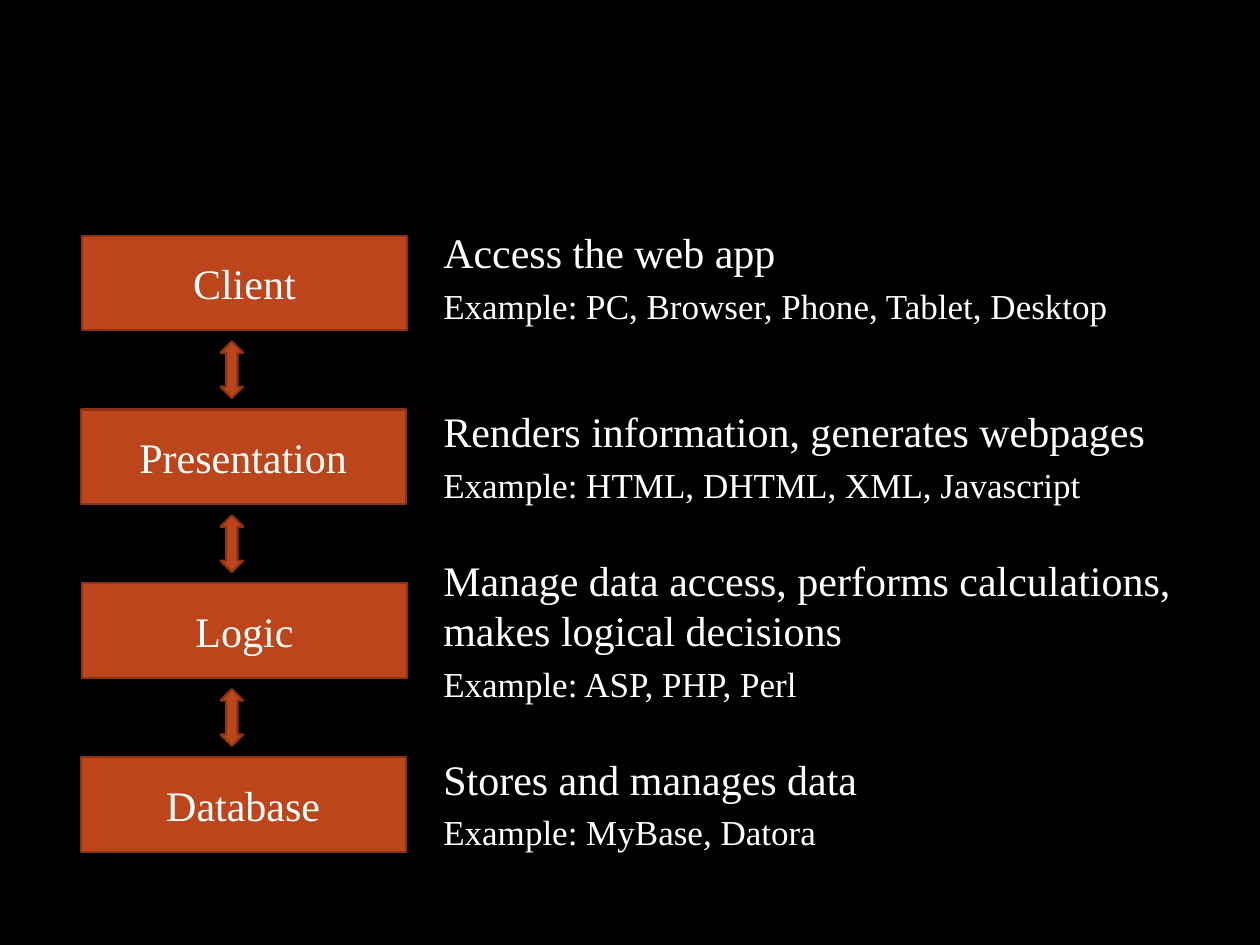
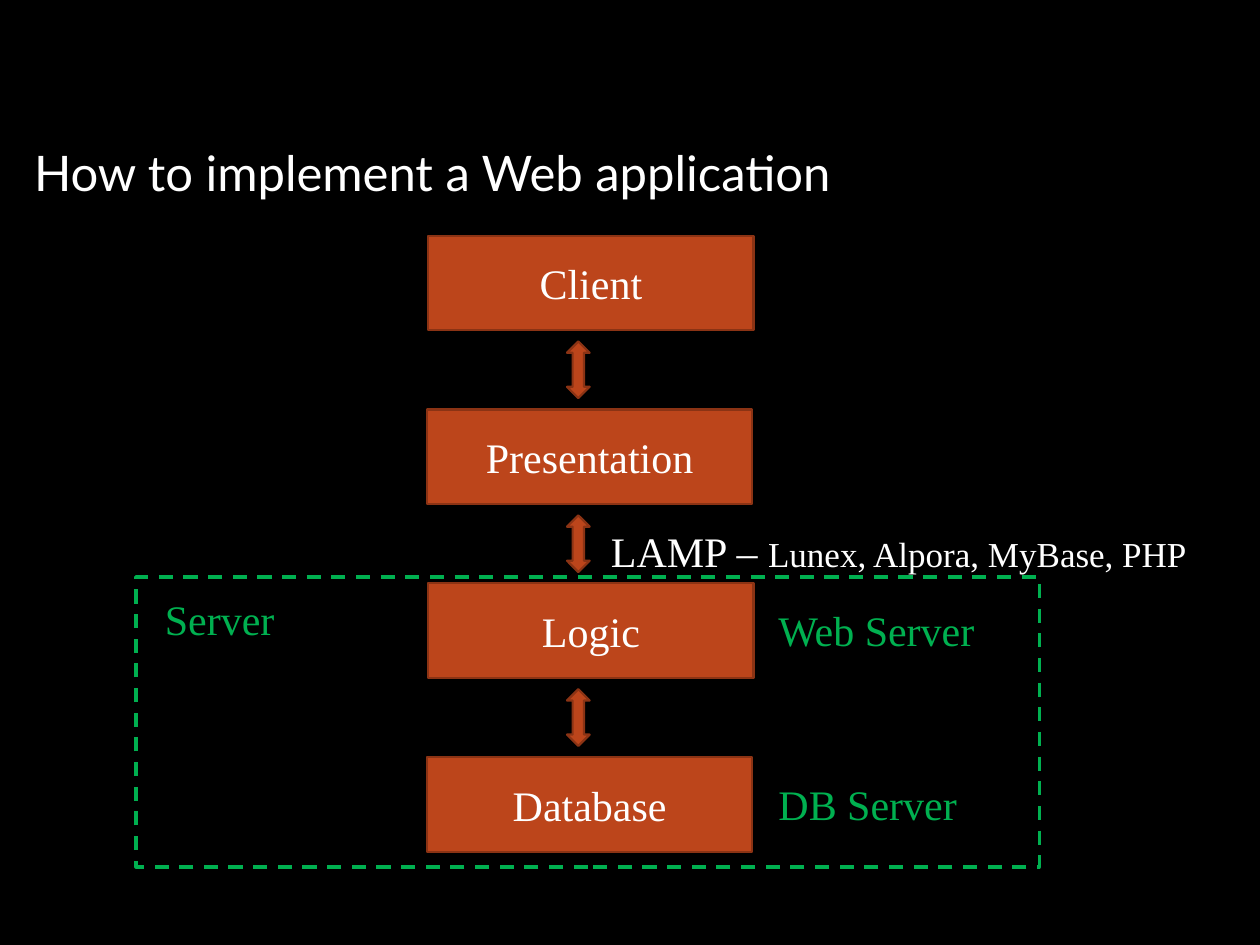
import pptx
import pptx.dml.color
import pptx.enum.dml
import pptx.enum.shapes
import pptx.enum.text
import pptx.util
from dataclasses import dataclass
from pptx.util import Inches

ALIGN = pptx.enum.text.PP_ALIGN
ANCHOR = pptx.enum.text.MSO_ANCHOR
SHAPE = pptx.enum.shapes.MSO_SHAPE


@dataclass(frozen=True)
class Theme:
    back: str = "000000"
    text: str = "FFFFFF"
    fill: str = "BC451B"
    edge: str = "8B3314"
    green: str = "00B050"
    serif: str = "Times New Roman"
    sans: str = "Lato"
    head: int = 28
    main: int = 24
    note: int = 20
    gap: float = 0.2  # space before, as a share of the type size


def rgb(code):
    return pptx.dml.color.RGBColor.from_string(code)


def write(par, text, size, color, font, align=ALIGN.LEFT, gap=0):
    """Add one formatted run to a paragraph."""
    run = par.add_run()
    run.text = text
    run.font.size = pptx.util.Pt(size)
    run.font.name = font
    run.font.color.rgb = rgb(color)
    par.alignment = align
    if gap:
        par.space_before = pptx.util.Pt(size * gap)


class Deck:
    def __init__(self, theme):
        self.theme = theme
        self.prs = pptx.Presentation()
        self.prs.slide_width = Inches(10)
        self.prs.slide_height = Inches(7.5)
        back = self.prs.slide_master.background.fill
        back.solid()
        back.fore_color.rgb = rgb(theme.back)
        self.slide = None

    def page(self, title=None):
        """Start a slide, with a title if one is given."""
        layout = self.prs.slide_layouts[5 if title else 6]
        self.slide = self.prs.slides.add_slide(layout)
        if title:
            t = self.theme
            head = self.slide.shapes.title
            head.left, head.top = Inches(0.17), Inches(1.08)
            head.width, head.height = Inches(9.17), Inches(0.67)
            frame = head.text_frame
            frame.auto_size = pptx.enum.text.MSO_AUTO_SIZE.NONE
            frame.vertical_anchor = ANCHOR.TOP
            write(frame.paragraphs[0], title, t.head, t.text, t.sans, gap=t.gap)

    def shape(self, kind, x, y, w, h, fill=None, edge=None, width=1.25):
        item = self.slide.shapes.add_shape(
            kind, Inches(x), Inches(y), Inches(w), Inches(h))
        item.shadow.inherit = False
        if fill:
            item.fill.solid()
            item.fill.fore_color.rgb = rgb(fill)
        else:
            item.fill.background()
        item.line.color.rgb = rgb(edge or self.theme.edge)
        item.line.width = pptx.util.Pt(width)
        return item

    def tier(self, name, x, y):
        t = self.theme
        frame = self.shape(SHAPE.RECTANGLE, x, y, 2.58, 0.75, t.fill).text_frame
        frame.vertical_anchor = ANCHOR.MIDDLE
        write(frame.paragraphs[0], name, t.main, t.text, t.serif,
              align=ALIGN.CENTER, gap=t.gap)

    def arrow(self, x, y):
        self.shape(SHAPE.UP_DOWN_ARROW, x, y, 0.18, 0.45, self.theme.fill)

    def frame(self, x, y, w, h):
        item = self.shape(SHAPE.RECTANGLE, x, y, w, h,
                          edge=self.theme.green, width=2)
        item.line.dash_style = pptx.enum.dml.MSO_LINE.DASH

    def label(self, x, y, w, h, text, note=None, color=None, split=True):
        """Main text, then a smaller note on its own line or the same one."""
        t = self.theme
        box = self.slide.shapes.add_textbox(
            Inches(x), Inches(y), Inches(w), Inches(h)).text_frame
        box.word_wrap = True
        par = box.paragraphs[0]
        color = color or t.text
        write(par, text, t.main, color, t.serif, gap=t.gap)
        if note and split:
            write(box.add_paragraph(), note, t.note, color, t.serif, gap=t.gap)
        elif note:
            write(par, note, t.note, color, t.serif)

    def stack(self, x):
        """Four tiers, linked by arrows; every other one sits a touch left."""
        top, step = 1.87, 1.38
        for i, name in enumerate(TIERS):
            self.tier(name, x - 0.01 * (i % 2), top + step * i)
        for i in range(len(TIERS) - 1):
            self.arrow(x + 1.1, top + 0.84 + step * i)


TIERS = ["Client", "Presentation", "Logic", "Database"]
ROLES = [
    (1.75, 0.91, "Access the web app",
     "Example: PC, Browser, Phone, Tablet, Desktop"),
    (3.17, 0.91, "Renders information, generates webpages",
     "Example: HTML, DHTML, XML, Javascript"),
    (4.35, 1.31, "Manage data access, performs calculations, "
     "makes logical decisions", "Example: ASP, PHP, Perl"),
    (5.93, 0.91, "Stores and manages data", "Example: MyBase, Datora"),
]


def main():
    theme = Theme()
    deck = Deck(theme)

    # Tiers and their roles
    deck.page()
    deck.stack(0.65)
    for y, h, role, note in ROLES:
        deck.label(3.42, y, 6.17, h, role, note)

    # Tiers and their servers
    deck.page("How to implement a Web application")
    deck.stack(3.4)
    deck.frame(1.08, 4.58, 7.17, 2.3)
    deck.label(4.75, 4.12, 5.25, 0.51, "LAMP – ",
               "Lunex, Alpora, MyBase, PHP", split=False)
    for x, y, w, name in [(1.21, 4.66, 1.12, "Server"),
                          (6.08, 4.75, 1.83, "Web Server"),
                          (6.08, 6.13, 1.83, "DB Server")]:
        deck.label(x, y, w, 0.51, name, color=theme.green)

    deck.prs.save("out.pptx")


if __name__ == "__main__":
    main()
